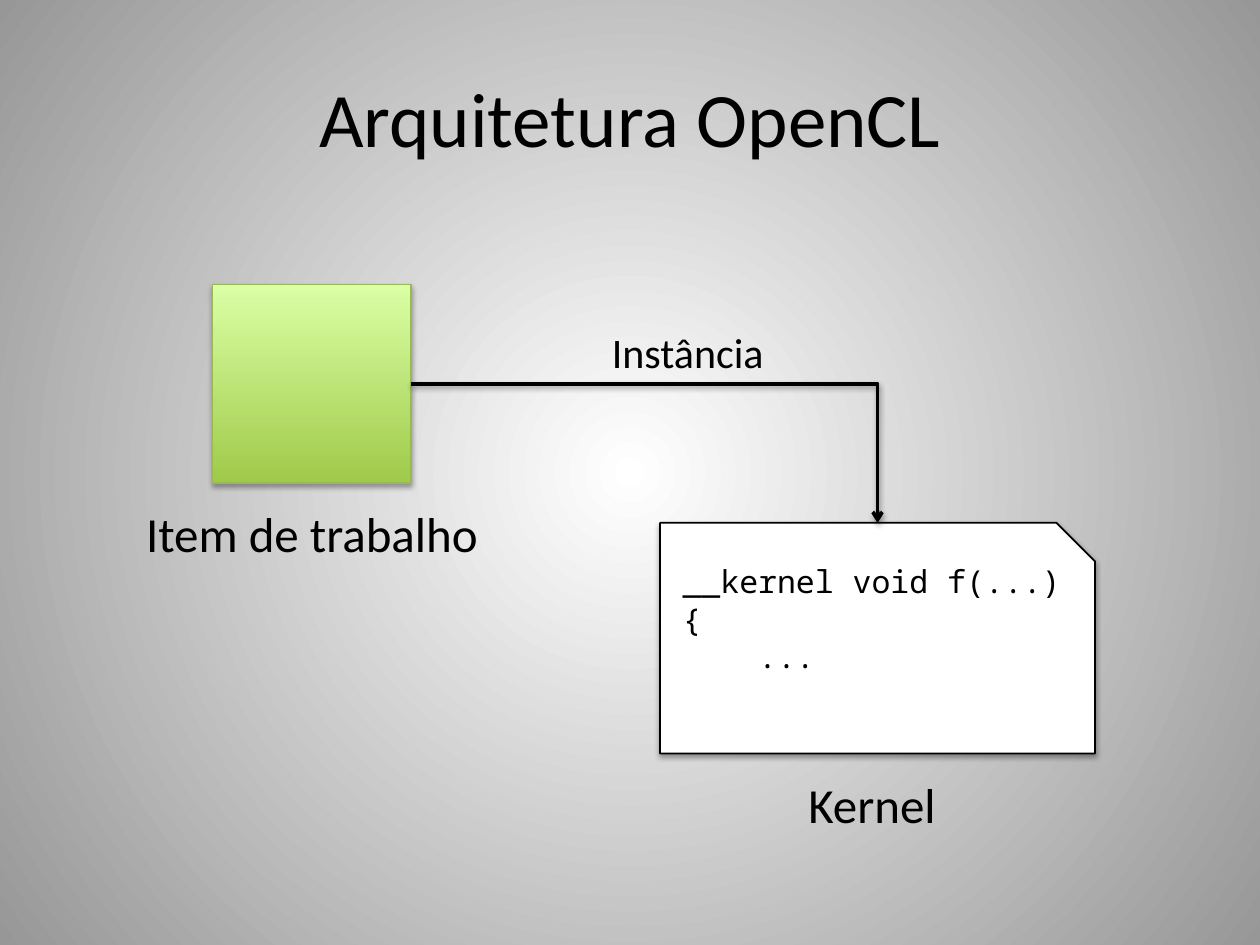
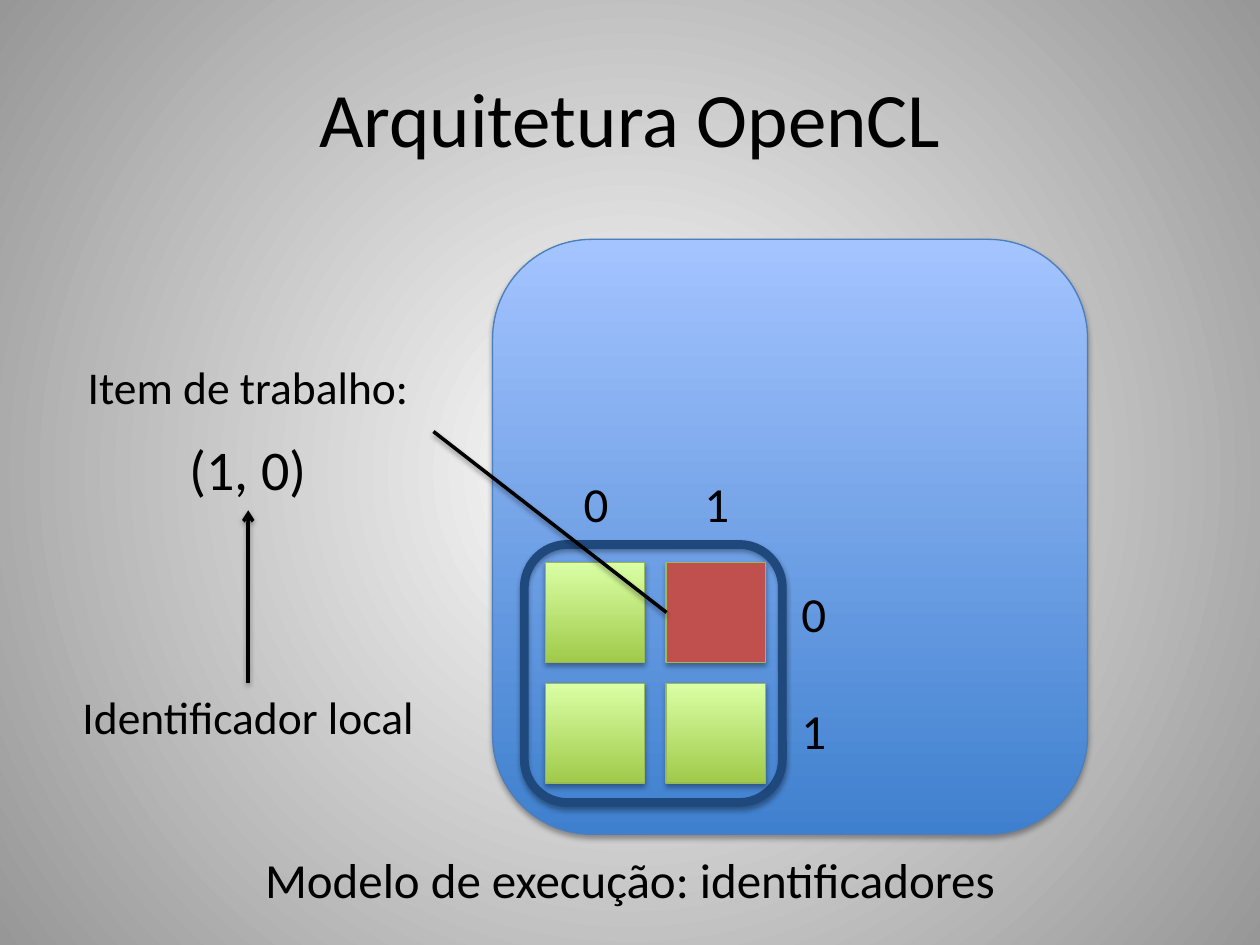
from dataclasses import dataclass

from lxml import etree
from pptx import Presentation
from pptx.dml import color
from pptx.enum import shapes, text
from pptx.oxml import ns
from pptx.util import Pt


@dataclass(frozen=True)
class Theme:
    ink: str = "000000"
    white: str = "FFFFFF"
    grey: str = "979797"
    green: tuple = ("A0CA4A", "DAFFA5")
    moss: str = "98B955"
    blue: tuple = ("3F80CE", "A4C4FF")
    steel: str = "4B7EBC"
    navy: str = "1F497D"
    red: str = "C0504D"
    lime: str = "9BBB59"
    font: str = "Calibri"
    mono: str = "Noto Sans Mono"
    head: int = 44
    pair: int = 32
    body: int = 28
    note: int = 26
    link: int = 24
    code: int = 18


T = Theme()
KIND = shapes.MSO_SHAPE
LINK = shapes.MSO_CONNECTOR
MID = text.PP_ALIGN.CENTER
LEFT = text.PP_ALIGN.LEFT
WIDE, HIGH = 720, 540


def rgb(code):
    return color.RGBColor.from_string(code)


def add(root, tag, **attrs):
    node = etree.SubElement(root, ns.qn(tag))
    for key, val in attrs.items():
        node.set(key, str(val))
    return node


def blend(fill, hues):
    fill.gradient()
    for stop, hue in zip(fill.gradient_stops, hues):
        stop.color.rgb = rgb(hue)


def shade(list_el, alpha, dist):
    drop = add(list_el, "a:outerShdw", blurRad=Pt(3.1), dist=Pt(dist),
               dir=5400000, rotWithShape=0)
    add(add(drop, "a:srgbClr", val=T.ink), "a:alpha", val=alpha * 1000)


def shape(slide, kind, box, fill, edge, width=0.75):
    item = slide.shapes.add_shape(kind, *map(Pt, box))
    if fill is None:
        item.fill.background()
    elif isinstance(fill, tuple):
        blend(item.fill, fill)
        item.fill.gradient_angle = 90
    else:
        item.fill.solid()
        item.fill.fore_color.rgb = rgb(fill)
    item.line.color.rgb = rgb(edge)
    item.line.width = Pt(width)
    item.shadow.inherit = False
    shade(item.element.spPr.find(ns.qn("a:effectLst")), 35, 1.8)
    return item


def label(slide, box, words, size, align=MID, font=T.font):
    frame = slide.shapes.add_textbox(*map(Pt, box)).text_frame
    frame.word_wrap = True
    frame.text = words
    for para in frame.paragraphs:
        para.alignment = align
        for run in para.runs:
            run.font.name = font
            run.font.size = Pt(size)
            run.font.color.rgb = rgb(T.ink)
    return frame


def wire(slide, kind, start, end):
    line = slide.shapes.add_connector(kind, *map(Pt, start + end))
    line.line.color.rgb = rgb(T.ink)
    line.line.width = Pt(2)
    shade(add(line.element.spPr, "a:effectLst"), 38, 1.6)
    return line


def tip(line):
    add(line.line._get_or_add_ln(), "a:tailEnd", type="arrow")


def base(deck):
    slide = deck.slides.add_slide(deck.slide_layouts[6])
    blend(slide.background.fill, (T.white, T.grey))
    grad = slide.element.find(".//" + ns.qn("a:gradFill"))
    grad.remove(grad.find(ns.qn("a:lin")))
    way = add(grad, "a:path", path="circle")
    add(way, "a:fillToRect", l=50000, t=50000, r=50000, b=50000)
    frame = label(slide, (36, 21.6, WIDE - 72, 90), "Arquitetura OpenCL", T.head)
    frame.vertical_anchor = text.MSO_ANCHOR.MIDDLE
    return slide


def task(slide, x, y, side):
    item = shape(slide, KIND.RECTANGLE, (x, y, side, side), T.green, T.moss)
    wide = 216
    label(slide, (x + (side - wide) / 2, y + 121.7, wide, 41),
          "Item de trabalho", T.body)
    return item


def card(slide, x, y, wide, high):
    item = shape(slide, KIND.SNIP_1_RECTANGLE, (x, y, wide, high),
                 T.white, T.ink, 1)
    frame = label(slide, (x + 5.8, y + 18.7, wide - 5.8, 72.7),
                  "__kernel void f(...)\n{\n...", T.code, LEFT, T.mono)
    props = frame.paragraphs[-1]._p.get_or_add_pPr()
    props.set("marL", str(Pt(43.2)))
    props.set("indent", "0")
    label(slide, (x + 77.7, y + high + 8.6, 92.2, 41), "Kernel", T.body, LEFT)
    return item


def join(slide, start, end):
    x, y = start.left + start.width, start.top + start.height // 2
    line = wire(slide, LINK.ELBOW, (x.pt if hasattr(x, "pt") else x / Pt(1),
                                    y / Pt(1)),
                ((end.left + end.width // 2) / Pt(1), end.top / Pt(1)))
    line.element.spPr.find(ns.qn("a:prstGeom")).set("prst", "bentConnector2")
    line.begin_connect(start, 3)
    line.end_connect(end, 3)
    line.end_x, line.end_y = end.left + end.width // 2, end.top
    tip(line)
    label(slide, (x / Pt(1) + 74.2, y / Pt(1) - 36.5, 167.8, 36),
          "Instância", T.link)


def grid(slide, x, y, side):
    shape(slide, KIND.ROUNDED_RECTANGLE, (x, y, side, side), None, T.navy, 5)
    cell, step, pad = 56.9, 69, 12
    for row in range(2):
        for col in range(2):
            hot = (col, row) == (1, 0)
            box = (x + pad + col * step, y + pad - 1.5 + row * step, cell, cell)
            shape(slide, KIND.RECTANGLE, box, T.red if hot else T.green,
                  T.lime if hot else T.moss)
    for num in range(2):
        label(slide, (x + 23 + num * step, y - 44, 36, 41), str(num), T.body)
        label(slide, (x + side, y + 18.8 + num * 67, 36, 41), str(num), T.body)


def notes(slide, x, y, wide):
    frame = label(slide, (x, y, wide, 90), "Item de trabalho:\n(1, 0)", T.note)
    pair = frame.paragraphs[1]
    pair.space_before = Pt(12)
    pair.runs[0].font.size = Pt(T.pair)
    wire(slide, LINK.STRAIGHT, (x + wide, y + 45), (x + wide + 133.2, y + 148.4))
    label(slide, (x - 8, y + 188.7, wide + 16, 39), "Identificador local", T.note)
    mid = x + wide / 2
    tip(wire(slide, LINK.STRAIGHT, (mid, y + 188.7), (mid, y + 90)))


def model(deck):
    slide = base(deck)
    item = task(slide, 121.5, 162.6, 113.4)
    code = card(slide, 377.2, 298.8, 248.5, 131.8)
    join(slide, item, code)


def local(deck):
    slide = base(deck)
    shape(slide, KIND.ROUNDED_RECTANGLE, (281.5, 136.8, 340, 340),
          T.blue, T.steel)
    label(slide, (36, 481.7, WIDE - 72, 41),
          "Modelo de execução: identificadores", T.body)
    grid(slide, 299.6, 311.1, 147.5)
    notes(slide, 36, 201.6, 211.7)


def main():
    deck = Presentation()
    deck.slide_width, deck.slide_height = Pt(WIDE), Pt(HIGH)
    model(deck)
    local(deck)
    deck.save("out.pptx")


if __name__ == "__main__":
    main()
